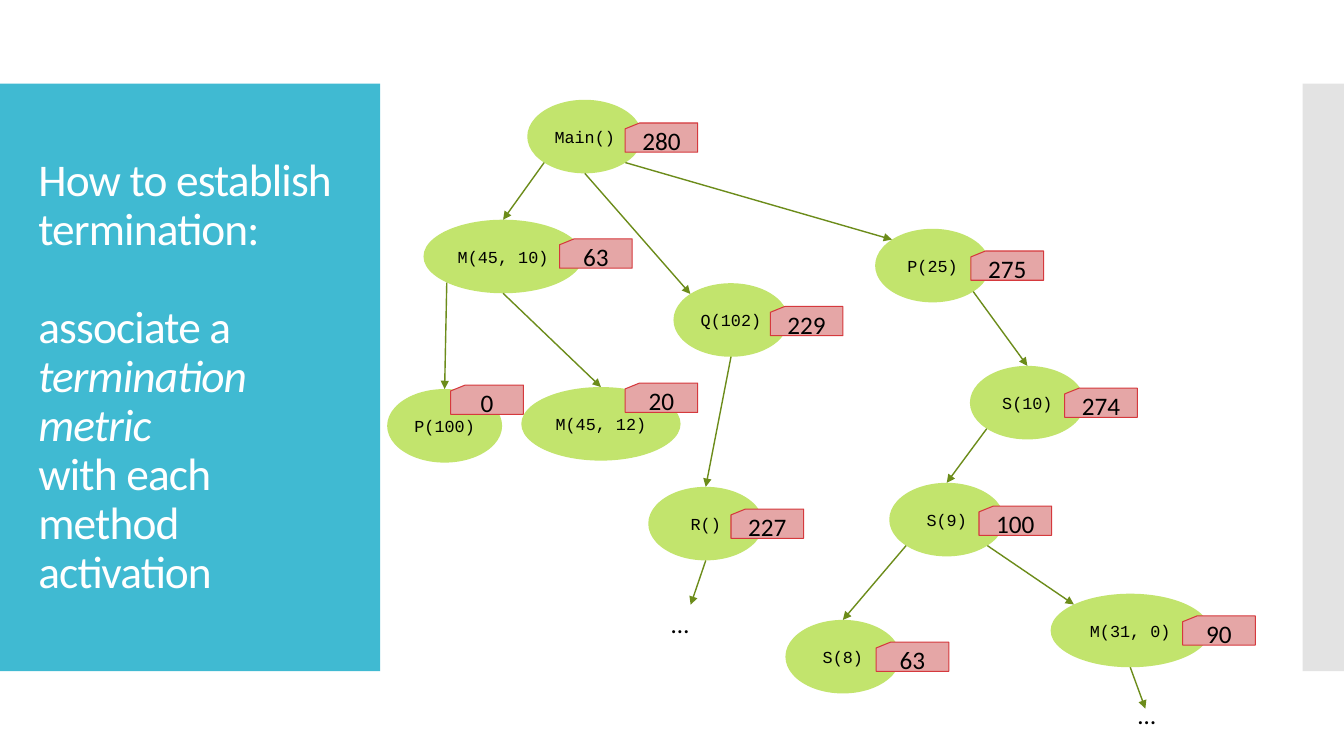
from math import sqrt

from lxml.etree import SubElement
from pptx import Presentation
from pptx.dml.color import RGBColor
from pptx.enum.shapes import MSO_CONNECTOR as CONN, MSO_SHAPE as SHAPE
from pptx.enum.text import MSO_ANCHOR as ANCHOR, MSO_AUTO_SIZE as AUTO, PP_ALIGN as ALIGN
from pptx.oxml.ns import qn
from pptx.util import Inches, Pt

COLORS = {"panel": "40BAD2", "strip": "C8C8C8", "node": "C2E46D", "arrow": "6C8C1A",
          "ticket": "E5A6A6", "ticket_line": "D5393D", "white": "FFFFFF", "black": "000000"}
NARROW, WIDE, NODE_H = 1.14, 1.58, 0.73
TICKET_W, TICKET_H = 0.72, 0.29
DIAG = (1 - 1 / sqrt(2)) / 2
SITES = {"top": (0.5, 0), "bottom": (0.5, 1), "top_left": (DIAG, DIAG),
         "bottom_left": (DIAG, 1 - DIAG), "bottom_right": (1 - DIAG, 1 - DIAG)}

# Label, left, top, width, metric, ticket offset from the node
NODES = {
    "main": ("Main()", 1.39, 0, NARROW, "280", 0.97, 0.23),
    "m10": ("M(45, 10)", 0.36, 1.19, WIDE, "63", 1.35, 0.19),
    "p100": ("P(100)", 0, 2.87, NARROW, "0", 0.63, -0.04),
    "q": ("Q(102)", 2.84, 1.82, NARROW, "229", 0.96, 0.23),
    "m12": ("M(45, 12)", 1.33, 2.85, WIDE, "20", 1.03, -0.04),
    "s10": ("S(10)", 5.78, 2.64, NARROW, "274", 0.94, 0.22),
    "p25": ("P(25)", 4.84, 1.28, NARROW, "275", 0.95, 0.22),
    "s9": ("S(9)", 4.98, 3.8, NARROW, "100", 0.89, 0.23),
    "s8": ("S(8)", 3.95, 5.16, NARROW, "63", 0.9, 0.22),
    "m31": ("M(31, 0)", 6.58, 4.9, WIDE, "90", 1.31, 0.22),
    "r": ("R()", 2.59, 3.84, NARROW, "227", 0.82, 0.22),
}
CALLS = [
    ("main", "bottom_left", "m10", "top"), ("m10", "bottom_left", "p100", "top"),
    ("m10", "bottom", "m12", "top"), ("main", "bottom", "q", "top_left"),
    ("main", "bottom_right", "p25", "top_left"), ("p25", "bottom_right", "s10", "top"),
    ("q", "bottom", "r", "top"), ("s10", "bottom_left", "s9", "top"),
    ("s9", "bottom_left", "s8", "top"), ("s9", "bottom_right", "m31", "top_left"),
]
# Caller, arrow tip, left and top of the ellipsis
OPEN_CALLS = [("r", (3.01, 5.01), (2.72, 5)), ("m31", (7.52, 6.04), (7.35, 5.9))]


def rgb(name):
    """Return the named colour."""
    return RGBColor.from_string(COLORS[name])


def add_text(p, text, size=18, font="Calibri", color="black", italic=None, spacing=None):
    """Add a formatted run to a paragraph."""
    r = p.add_run()
    r.text = text
    r.font.size, r.font.name, r.font.italic = Pt(size), font, italic
    r.font.color.rgb = rgb(color)
    if spacing is not None:
        r.font._element.set("spc", str(int(spacing * 100)))


def add_box(s, kind, left, top, width, height, fill, line=None, text="", **fmt):
    """Add a flat preset shape with centred text."""
    sp = s.shapes.add_shape(kind, Inches(left), Inches(top), Inches(width), Inches(height))
    sp.shadow.inherit = False
    sp.fill.solid()
    sp.fill.fore_color.rgb = rgb(fill)
    if line:
        sp.line.color.rgb = rgb(line)
        sp.line.width = Pt(0.75)
    else:
        sp.line.fill.background()
    if text:
        tf = sp.text_frame
        tf.margin_left = tf.margin_right = 0
        tf.vertical_anchor = ANCHOR.MIDDLE
        tf.paragraphs[0].alignment = ALIGN.CENTER
        add_text(tf.paragraphs[0], text, **fmt)
    return sp


def add_arrow(s, start, end):
    """Add a straight arrow between two points."""
    cx = s.shapes.add_connector(CONN.STRAIGHT, *map(Inches, (*start, *end)))
    cx.line.color.rgb = rgb("arrow")
    cx.line.width = Pt(1)
    SubElement(cx.line._get_or_add_ln(), qn("a:tailEnd"), type="triangle")
    SubElement(cx._element.spPr, qn("a:effectLst"))
    return cx


def add_title_panel(s, left, top, width, height):
    """Build the coloured panel and the title inside it."""
    add_box(s, SHAPE.RECTANGLE, left, top, width, height, "panel")
    title = s.shapes.title
    s.shapes._spTree.append(title._element)
    title.left, title.top = Inches(left + 0.28), Inches(top + 0.4)
    title.width, title.height = Inches(width - 0.55), Inches(height - 0.8)
    tf = title.text_frame
    tf.word_wrap, tf.auto_size, tf.vertical_anchor = True, AUTO.NONE, ANCHOR.MIDDLE
    fmt = dict(size=32.4, color="white", spacing=-0.6)
    question, answer = tf.paragraphs[0], tf.add_paragraph()
    for p in (question, answer):
        p.alignment, p.line_spacing, p.space_before = ALIGN.LEFT, 0.9, Pt(0)
    answer.space_before = Pt(35)
    add_text(question, "How to establish termination:", **fmt)
    add_text(answer, "associate a ", **fmt)
    add_text(answer, "termination metric", italic=True, **fmt)
    answer.add_line_break()
    add_text(answer, "with each method activation", italic=False, **fmt)


def add_side_strip(s, left, top, width, height):
    """Build the half-transparent strip at the right edge."""
    sp = add_box(s, SHAPE.RECTANGLE, left, top, width, height, "strip")
    color = sp._element.spPr.find(qn("a:solidFill"))[0]
    SubElement(color, qn("a:alpha"), val="50000")


def add_call_tree(s, left, top):
    """Build the tree of method calls with their metrics."""
    def site(name, side):
        """Return the point on a side of a node."""
        _, x, y, width, *_ = NODES[name]
        fx, fy = SITES[side]
        return left + x + fx * width, top + y + fy * NODE_H

    ellipses = {}
    for name, (label, x, y, width, *_) in NODES.items():
        ellipses[name] = add_box(s, SHAPE.OVAL, left + x, top + y, width, NODE_H, "node",
                                 text=label, size=12, font="Courier New")
    for caller, out, callee, into in CALLS:
        cx = add_arrow(s, site(caller, out), site(callee, into))
        if into == "top":
            cx.end_connect(ellipses[callee], 0)
    for caller, (tip_x, tip_y), (x, y) in OPEN_CALLS:
        add_arrow(s, site(caller, "bottom"), (left + tip_x, top + tip_y))
        tb = s.shapes.add_textbox(Inches(left + x), Inches(top + y), Inches(0.79), Inches(0.4))
        tb.text_frame.word_wrap = True
        tb.text_frame.auto_size = AUTO.SHAPE_TO_FIT_TEXT
        add_text(tb.text_frame.paragraphs[0], "…")
    for _, x, y, _, metric, dx, dy in NODES.values():
        add_box(s, SHAPE.FLOWCHART_CARD, left + x + dx, top + y + dy, TICKET_W, TICKET_H,
                "ticket", line="ticket_line", text=metric)


def main():
    """Build and save the slide."""
    prs = Presentation()
    prs.slide_width, prs.slide_height = Inches(13.33), Inches(7.5)
    s = prs.slides.add_slide(prs.slide_layouts[5])
    add_side_strip(s, 12.92, 0.83, 0.41, 5.83)
    add_title_panel(s, 0, 0.83, 3.77, 5.83)
    add_call_tree(s, 3.84, 0.99)
    prs.save("out.pptx")


if __name__ == "__main__":
    main()
